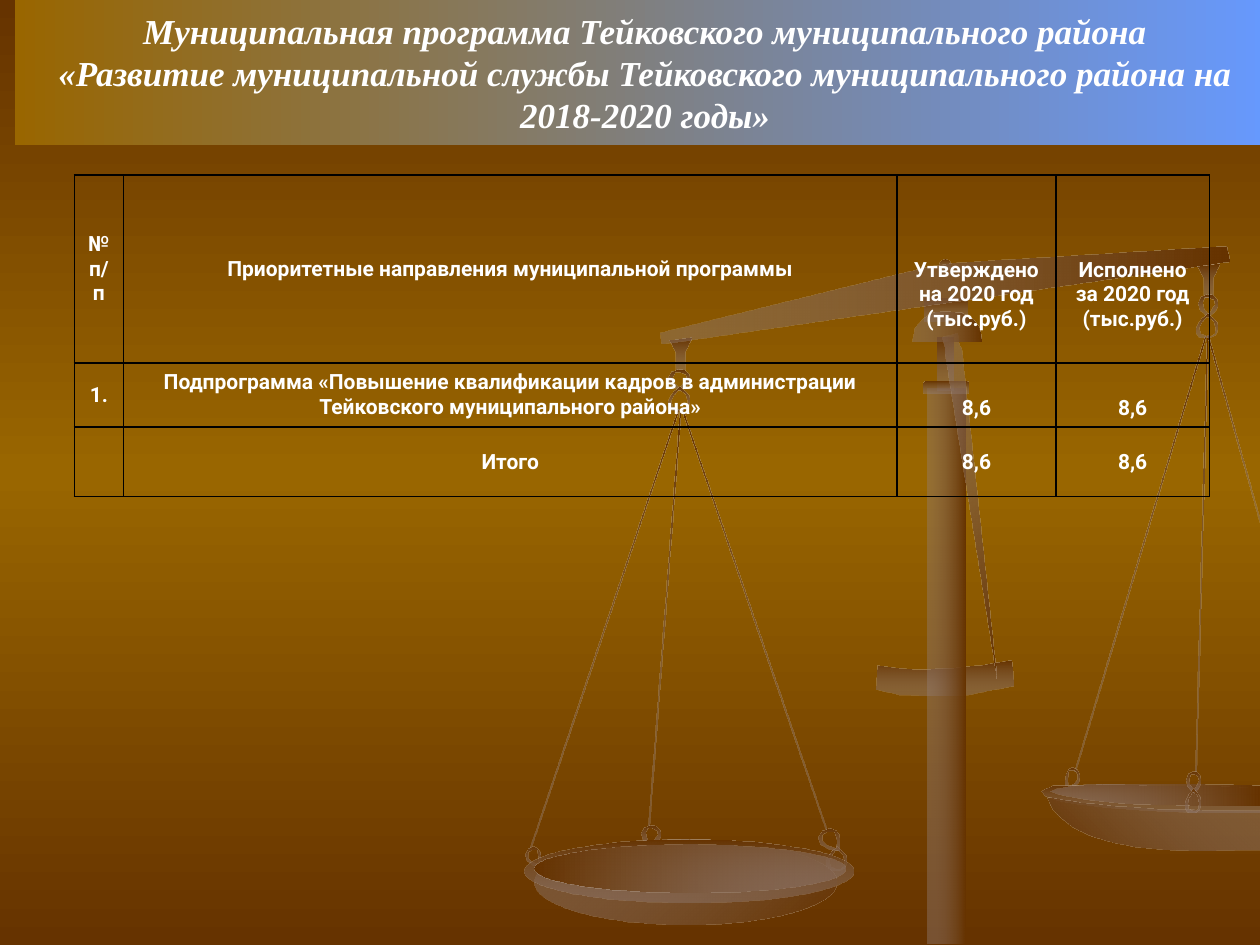
from dataclasses import dataclass
from typing import NamedTuple

from lxml import etree
from pptx import Presentation
from pptx.dml.color import RGBColor
from pptx.enum.shapes import MSO_SHAPE
from pptx.enum.text import MSO_ANCHOR, MSO_AUTO_SIZE, PP_ALIGN
from pptx.oxml.ns import qn
from pptx.util import Inches, Pt

RECT, OVAL, ROUND = MSO_SHAPE.RECTANGLE, MSO_SHAPE.OVAL, MSO_SHAPE.ROUNDED_RECTANGLE
MIDDLE, BOTTOM, CENTER = MSO_ANCHOR.MIDDLE, MSO_ANCHOR.BOTTOM, PP_ALIGN.CENTER
TITLE_ONLY = 5


@dataclass(frozen=True)
class Theme:
    brown: str = "663300"
    gold: str = "996600"
    metal: str = "937F79"
    blue: str = "6699FF"
    text: str = "FFFFFF"
    border: str = "000000"
    title_font: str = "Times New Roman"
    table_font: str = "Roboto"
    title_size: float = 20
    table_size: float = 12
    border_width: float = 1
    metal_alpha: int = 40


THEME = Theme()


class Shade(NamedTuple):
    colors: tuple
    angle: int


class Box(NamedTuple):
    left: float
    top: float
    width: float
    height: float


@dataclass(frozen=True)
class Piece:
    """A part of the scales: a preset shape, or contours placed within the box."""
    form: object
    box: Box
    shade: Shade = Shade((THEME.brown, THEME.metal), 90)
    turn: float = 0
    mirrored: bool = False


ACROSS = Shade((THEME.metal, THEME.brown), 0)
DIAGONAL = Shade((THEME.metal, THEME.brown), 45)
INCHES = Box(0, 0, 1, 1)  # contours given directly in inches

# Contours as shares of their box: an outline and, for chain links, a hole
DROP = (((.5, 1), (.8, .8), (1, .5), (.95, .25), (.75, .05), (.45, 0), (.15, .1), (0, .4), (.1, .7)),
        ((.5, .12), (.8, .25), (.85, .45), (.55, .8), (.5, .85), (.25, .6), (.2, .35), (.3, .15)))
LOOP = (((0, .8), (.12, .95), (.3, 1), (.6, 1), (.88, .87), (1, .62), (.95, .37), (.75, .18),
         (.52, 0), (.25, .22), (.08, .42), (0, .6)),
        ((.14, .6), (.22, .4), (.4, .2), (.5, .12), (.78, .3), (.88, .6), (.85, .8), (.7, .9),
         (.45, .92), (.2, .82)))
CORNER = (((1, 1), (1, .65), (.95, .3), (.8, .1), (.5, 0), (.2, .1), (0, .4), (.1, .7), (.45, .9)),
          ((.35, .17), (.75, .17), (.85, .5), (.82, .88), (.4, .75), (.17, .55), (.17, .3)))
HANGER = (((1, 0), (0, .07), (.28, .45), (.28, 1), (.7, 1), (.7, .42)),)

# Contours in inches
CROSSBAR = (((6.97, 5.28), (7.24, 5.31), (7.39, 5.31), (7.57, 5.3), (7.78, 5.28), (8.02, 5.24),
             (8.04, 5.44), (7.82, 5.48), (7.68, 5.51), (7.51, 5.52), (7.33, 5.52), (7.14, 5.51),
             (6.96, 5.47)),)
RIM = (((10, 6.26), (9.58, 6.24), (9.1, 6.24), (8.75, 6.23), (8.46, 6.24), (8.36, 6.24),
        (8.31, 6.26), (8.27, 6.28), (8.3, 6.32), (8.42, 6.36), (8.63, 6.39), (8.94, 6.42),
        (9.35, 6.44), (9.58, 6.45), (10, 6.45)),)
BOWL = (((8.31, 6.33), (8.35, 6.42), (8.42, 6.49), (8.52, 6.57), (8.65, 6.63), (8.82, 6.68),
         (9.03, 6.72), (9.28, 6.74), (9.57, 6.75), (10, 6.74), (10, 6.43), (9.53, 6.43),
         (9.18, 6.42), (8.86, 6.4), (8.57, 6.37)),)
HOLLOW = (((10, 6.24), (9.56, 6.23), (8.62, 6.23), (8.51, 6.24), (8.39, 6.26), (8.34, 6.28),
           (8.43, 6.31), (8.63, 6.34), (8.93, 6.37), (9.33, 6.38), (9.55, 6.39), (10, 6.39)),)
BEAM = (((9.73, 1.96), (9.76, 2.08), (5.25, 2.73), (5.24, 2.64), (7.37, 2.12), (7.59, 2.09)),)
POINTER = (((7.91, 5.39), (7.5, 2.8), (7.5, 2.76), (7.48, 2.68), (7.6, 2.65), (7.61, 2.74),
            (7.63, 2.77)),)
CAP = (((7.52, 2.47), (7.63, 2.48), (7.72, 2.53), (7.77, 2.6), (7.79, 2.71), (7.24, 2.71),
        (7.26, 2.6), (7.32, 2.53), (7.4, 2.48)),)

# Strings: left, top, length, turn in degrees
STRINGS = [(9.53, 2.66, 3.47, 1.5), (9.79, 2.64, 1.53, 344.6), (5.98, 3.15, 3.53, 341),
           (4.79, 3.16, 3.68, 18.6), (5.27, 3.25, 3.31, 4.2)]

# The scales, from back to front
SCALES = [
    Piece(RECT, Box(7.34, 2.37, .34, .18)),
    Piece(OVAL, Box(7.46, 2.06, .08, .08)),
    Piece(RECT, Box(9.04, 2.6, .01, 3.6), turn=16.6),
    Piece(CORNER, Box(8.46, 6.09, .11, .17), mirrored=True),
    *[Piece(RECT, Box(left, top, .01, length), turn=turn) for left, top, length, turn in STRINGS],
    Piece(CROSSBAR, INCHES),
    Piece(RIM, INCHES),
    Piece(BOWL, INCHES, Shade((THEME.brown, THEME.metal), 315)),
    Piece(HOLLOW, INCHES, ACROSS),
    Piece(HANGER, Box(5.31, 2.68, .18, .27)),
    Piece(DROP, Box(5.31, 2.93, .16, .17)),
    Piece(LOOP, Box(5.31, 3.07, .16, .19)),
    Piece(HANGER, Box(9.5, 2.09, .18, .27)),
    Piece(DROP, Box(9.51, 2.34, .15, .17)),
    Piece(LOOP, Box(9.5, 2.49, .16, .19)),
    Piece(DROP, Box(9.42, 6.12, .11, .17)),
    Piece(BEAM, INCHES, ACROSS),
    Piece(DROP, Box(5.09, 6.55, .15, .16)),
    Piece(LOOP, Box(6.56, 6.72, .16, .19)),
    Piece(CORNER, Box(4.17, 6.72, .12, .16)),
    Piece(OVAL, Box(4.24, 6.66, 2.4, .68), DIAGONAL),
    Piece(OVAL, Box(4.16, 6.66, 2.61, .5)),
    Piece(OVAL, Box(4.24, 6.7, 2.47, .38), Shade((THEME.brown, THEME.metal), 0)),
    Piece(CORNER, Box(6.5, 6.58, .16, .17)),
    Piece(LOOP, Box(9.41, 6.26, .12, .19)),
    Piece(RECT, Box(7.36, 3.08, .3, 4.41), ACROSS),
    Piece(RECT, Box(7.44, 2.68, .13, .42)),
    Piece(ROUND, Box(7.33, 3.03, .36, .09)),
    Piece(POINTER, INCHES, DIAGONAL),
    Piece(CAP, INCHES, ACROSS),
]

TITLE = ["Муниципальная программа Тейковского муниципального района",
         "«Развитие муниципальной службы Тейковского муниципального района на 2018-2020 годы»"]
COLUMNS = [.39, 6.14, 1.26, 1.22]
ROWS = [1.49, .51, .55]
CELLS = [
    ["№\nп/п", "Приоритетные направления муниципальной программы",
     "Утверждено\nна 2020 год\n(тыс.руб.)", "Исполнено\nза 2020 год\n(тыс.руб.)"],
    ["1.", "Подпрограмма «Повышение квалификации кадров в администрации "
           "Тейковского муниципального района»", "8,6", "8,6"],
    ["", "Итого", "8,6", "8,6"],
]


def paint(fill, owner, shade: Shade) -> None:
    """Fill with evenly spaced colours; the metal tone is translucent."""
    fill.gradient()
    gradient = next(owner.iter(qn("a:gradFill")))
    stops = gradient.find(qn("a:gsLst"))
    for stop in list(stops):
        stops.remove(stop)
    for index, color in enumerate(shade.colors):
        position = 100000 * index // (len(shade.colors) - 1)
        stop = etree.SubElement(stops, qn("a:gs"), pos=str(position))
        tone = etree.SubElement(stop, qn("a:srgbClr"), val=color)
        if color == THEME.metal:
            etree.SubElement(tone, qn("a:alpha"), val=str(THEME.metal_alpha * 1000))
    gradient.find(qn("a:lin")).set("ang", str(shade.angle * 60000))


def draw_piece(page, piece: Piece) -> None:
    box = piece.box
    if isinstance(piece.form, tuple):
        contours = [[(Inches(box.left + (1 - x if piece.mirrored else x) * box.width),
                      Inches(box.top + y * box.height)) for x, y in contour]
                    for contour in piece.form]
        builder = page.shapes.build_freeform(*contours[0][0])
        for contour in contours:
            if contour is not contours[0]:
                builder.move_to(*contour[0])
            builder.add_line_segments(contour[1:], close=True)
        shape = builder.convert_to_shape()
    else:
        shape = page.shapes.add_shape(piece.form, *map(Inches, box))
        shape.rotation = piece.turn
    shape.shadow.inherit = False
    shape.line.fill.background()
    paint(shape.fill, shape._element, piece.shade)


def write(frame, lines: list, font: str, size: float, italic: bool = False) -> None:
    for index, line in enumerate(lines):
        para = frame.add_paragraph() if index else frame.paragraphs[0]
        para.alignment = CENTER
        span = para.add_run()
        span.text = line
        span.font.name, span.font.size = font, Pt(size)
        span.font.bold, span.font.italic = True, italic
        span.font.color.rgb = RGBColor.from_string(THEME.text)


def add_borders(cell) -> None:
    props = cell._tc.get_or_add_tcPr()
    for index, side in enumerate(("lnL", "lnR", "lnT", "lnB")):
        line = etree.Element(qn(f"a:{side}"), w=str(Pt(THEME.border_width)))
        fill = etree.SubElement(line, qn("a:solidFill"))
        etree.SubElement(fill, qn("a:srgbClr"), val=THEME.border)
        props.insert(index, line)


def draw_table(page) -> None:
    frame = page.shapes.add_table(len(ROWS), len(COLUMNS), Inches(.59), Inches(1.39),
                                  Inches(sum(COLUMNS)), Inches(sum(ROWS)))
    table = frame.table
    table.first_row = table.horz_banding = False
    for column, width in zip(table.columns, COLUMNS):
        column.width = Inches(width)
    for r, height in enumerate(ROWS):
        table.rows[r].height = Inches(height)
        for c, text in enumerate(CELLS[r]):
            cell = table.cell(r, c)
            cell.fill.background()
            cell.vertical_anchor = BOTTOM if c >= 2 and r < 2 else MIDDLE
            if c >= 2 and r == 0:
                cell.margin_bottom = Inches(.25)
            if text:
                write(cell.text_frame, text.split("\n"), THEME.table_font, THEME.table_size)
            add_borders(cell)


def draw_title(page) -> None:
    title = page.shapes.title
    title.left, title.top, title.width, title.height = map(Inches, (.12, 0, 10, 1.15))
    paint(title.fill, title._element, Shade((THEME.gold, THEME.blue), 0))
    frame = title.text_frame
    frame.word_wrap, frame.auto_size = True, MSO_AUTO_SIZE.NONE
    frame.vertical_anchor = MIDDLE
    write(frame, TITLE, THEME.title_font, THEME.title_size, italic=True)


def main() -> None:
    deck = Presentation()
    deck.slide_width, deck.slide_height = Inches(10), Inches(7.5)
    page = deck.slides.add_slide(deck.slide_layouts[TITLE_ONLY])
    backdrop = Shade((THEME.brown, THEME.gold, THEME.brown), 90)
    paint(page.background.fill, page._element, backdrop)
    draw_title(page)
    for piece in SCALES:
        draw_piece(page, piece)
    draw_table(page)
    deck.save("out.pptx")


if __name__ == "__main__":
    main()
